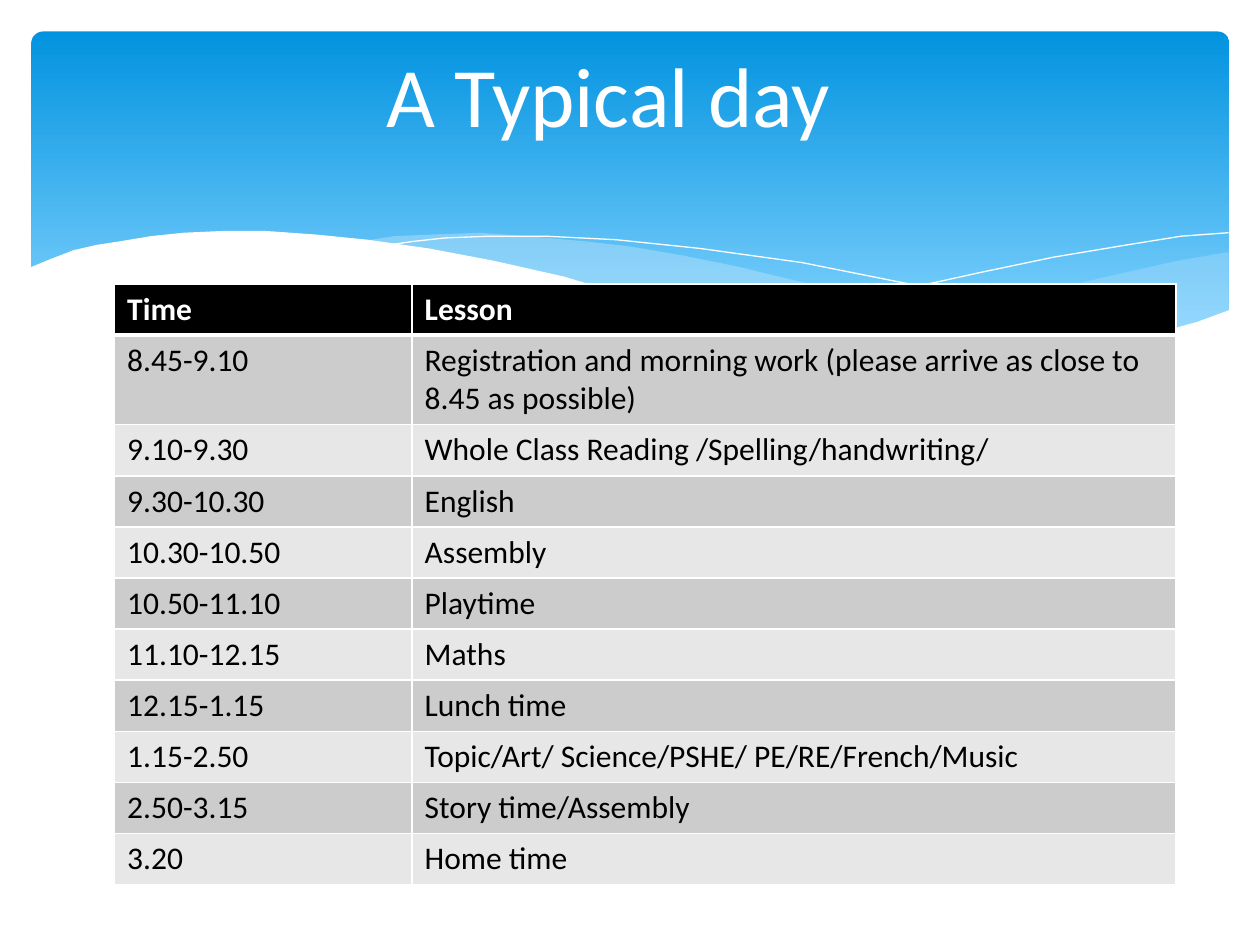
import pptx
import pptx.util
import pptx.dml.color
import pptx.enum.shapes
import pptx.enum.text
import pptx.oxml
import pptx.oxml.ns

Pt = pptx.util.Pt
A_NS = pptx.oxml.ns.nsdecls("a")


def rgb(value):
    return pptx.dml.color.RGBColor.from_string(value)


def write(tf, text, size=18, color="000000", bold=False, align=None):
    p = tf.paragraphs[0]
    p.alignment = align
    r = p.add_run()
    r.text = text
    r.font.name = "Calibri"
    r.font.size = Pt(size)
    r.font.bold = bold
    r.font.color.rgb = rgb(color)


prs = pptx.Presentation()
prs.slide_width, prs.slide_height = Pt(720), Pt(540)
s = prs.slides.add_slide(prs.slide_layouts[5])

# Blue banner
banner = s.shapes.add_shape(pptx.enum.shapes.MSO_SHAPE.ROUNDED_RECTANGLE,
                            Pt(18), Pt(18), Pt(684.5), Pt(194.5))
banner.adjustments[0] = 0.034
banner.shadow.inherit = False
banner.line.fill.background()
banner.fill.gradient()
banner.fill.gradient_angle = 270
for stop, (position, color) in zip(banner.fill.gradient_stops,
                                   [(0, "0293E0"), (0.9, "83D3FE")]):
    stop.position = position
    stop.color.rgb = rgb(color)

# Waves: fill, opacity in percent, outline points; no fill means an open line
right_wave = [
    (702, 144), (673, 149), (641.5, 155.5), (620, 160.6), (579.6, 170.6),
    (542, 178.6), (508, 185), (476, 191), (497.5, 193.7), (517.7, 195.8),
    (545, 198.7), (578, 200), (607.7, 199.4), (634, 196.6), (657, 192),
    (678, 186.5), (702.5, 178), (702.5, 144)]
middle_wave = [
    (643, 196.6), (602.6, 190.8), (558, 182.9), (508, 172.8), (453, 159.8),
    (420.5, 151.9), (389.5, 146.2), (361.4, 141.1), (334.8, 137.5),
    (302.4, 134.6), (273.6, 133.2), (247.7, 133.9), (225.4, 135.4),
    (206, 137.5), (232.6, 141.1), (260.6, 146.2), (290.9, 151.9),
    (323.3, 159.8), (381.6, 172.8), (432.7, 183.6), (468, 190.1),
    (500.4, 194.4), (529.9, 198), (556.6, 199.4), (581, 200.2),
    (603.4, 200.2), (624.2, 198.7)]
left_line = [
    (222.5, 140.4), (236, 138.2), (254.2, 136.1), (278.6, 134.6),
    (311.8, 134.6), (352, 136.8), (400.3, 141.8), (457.9, 149.8),
    (523.4, 162.7), (598.3, 180.7), (653, 195.8)]
right_line = [
    (441.4, 185), (500.4, 169.2), (558.7, 155.5), (602, 146.9),
    (644.4, 139.7), (675.4, 135.4), (702, 133.2)]
white_wave = [
    (703.4, 177.1), (684, 184.3), (655.2, 192.2), (621.4, 196.6),
    (582.5, 199.4), (547.9, 198.7), (509.8, 195.8), (466.6, 190.8),
    (416.9, 182.2), (362.2, 169.9), (321.8, 158.4), (281.5, 149),
    (244.8, 141.8), (210.2, 136.8), (180, 133.9), (151.9, 132.5),
    (127.4, 132.5), (105, 133.2), (85.7, 134.6), (68.4, 137.5),
    (54.7, 140.4), (42.5, 143.3), (28.8, 147.6), (16.6, 153.4),
    (16.6, 236.9), (703.4, 236.9)]
waves = [("C6E7FC", 29, right_wave), ("C6E7FC", 40, middle_wave),
         (None, 100, left_line), (None, 100, right_line),
         ("FFFFFF", 100, white_wave)]
for color, opacity, points in waves:
    builder = s.shapes.build_freeform(*points[0], scale=Pt(1))
    builder.add_line_segments(points[1:], close=color is not None)
    wave = builder.convert_to_shape()
    wave.shadow.inherit = False
    if color is None:
        wave.fill.background()
        wave.line.color.rgb = rgb("FFFFFF")
        wave.line.width = Pt(0)
        continue
    wave.line.fill.background()
    wave.fill.solid()
    wave.fill.fore_color.rgb = rgb(color)
    if opacity < 100:
        clr = wave.element.spPr.find(".//" + pptx.oxml.ns.qn("a:srgbClr"))
        clr.append(pptx.oxml.parse_xml(f'<a:alpha {A_NS} val="{opacity * 1000}"/>'))

# Title, brought in front of the banner
title = s.shapes.title
title.element.getparent().append(title.element)
title.left, title.top, title.width, title.height = Pt(44.6), Pt(22.3), Pt(606.2), Pt(62.6)
tf = title.text_frame
tf.auto_size = pptx.enum.text.MSO_AUTO_SIZE.NONE
tf.margin_left = tf.margin_right = tf.margin_top = tf.margin_bottom = 0
tf.vertical_anchor = pptx.enum.text.MSO_ANCHOR.MIDDLE
write(tf, "A Typical day", size=48.3, color="FFFFFF",
      align=pptx.enum.text.PP_ALIGN.CENTER)

# Timetable
lessons = [
    ("Time", "Lesson"),
    ("8.45-9.10", "Registration and morning work (please arrive as close to 8.45 as possible)"),
    ("9.10-9.30", "Whole Class Reading /Spelling/handwriting/"),
    ("9.30-10.30", "English"),
    ("10.30-10.50", "Assembly"),
    ("10.50-11.10", "Playtime"),
    ("11.10-12.15", "Maths"),
    ("12.15-1.15", "Lunch time"),
    ("1.15-2.50", "Topic/Art/ Science/PSHE/ PE/RE/French/Music"),
    ("2.50-3.15", "Story time/Assembly"),
    ("3.20", "Home time"),
]
table = s.shapes.add_table(len(lessons), 2, Pt(65.5), Pt(162.3), Pt(606.5), Pt(342)).table
table.columns[0].width, table.columns[1].width = Pt(170), Pt(436.5)
for i, lesson in enumerate(lessons):
    header = i == 0
    table.rows[i].height = Pt(50.8 if i == 1 else 29.2)
    fill = "000000" if header else ("E7E7E7", "CCCCCC")[i % 2]
    # White borders, thicker under the header
    borders = {"lnL": 1, "lnR": 1, "lnT": 3 if i == 1 else 1, "lnB": 3 if header else 1}
    for j, text in enumerate(lesson):
        cell = table.cell(i, j)
        write(cell.text_frame, text, color="FFFFFF" if header else "000000", bold=header)
        cell.fill.solid()
        cell.fill.fore_color.rgb = rgb(fill)
        for k, (side, width) in enumerate(borders.items()):
            cell._tc.get_or_add_tcPr().insert(k, pptx.oxml.parse_xml(
                f'<a:{side} {A_NS} w="{int(Pt(width))}"><a:solidFill>'
                f'<a:srgbClr val="FFFFFF"/></a:solidFill></a:{side}>'))

prs.save("out.pptx")
